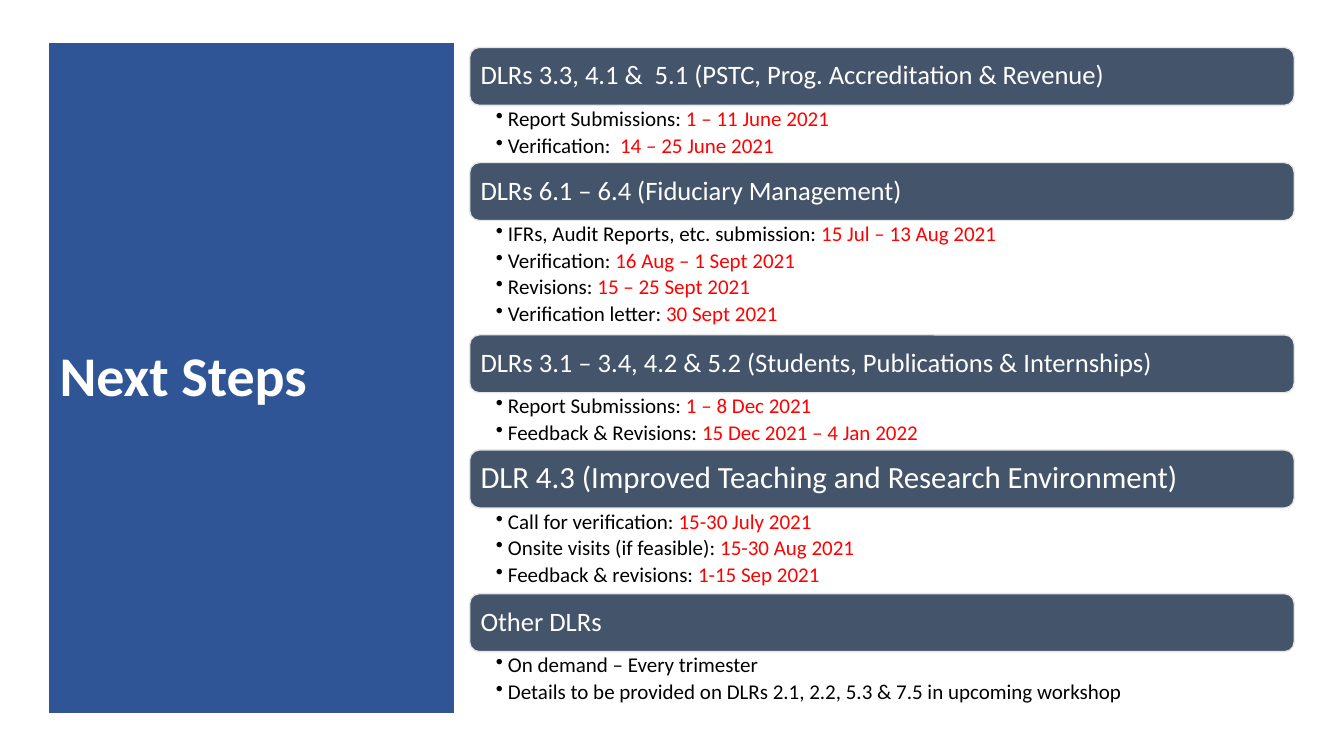
from dataclasses import dataclass

import pptx
import pptx.dml.color
import pptx.enum.shapes
import pptx.enum.text
import pptx.util
from lxml import etree
from pptx.oxml.ns import qn

Shape = pptx.enum.shapes.MSO_SHAPE
Align = pptx.enum.text.PP_ALIGN
Anchor = pptx.enum.text.MSO_ANCHOR
Pt = pptx.util.Pt

WIDE = pptx.util.Inches(13.33)
HIGH = pptx.util.Inches(7.5)


@dataclass(frozen=True)
class Theme:
    face: str = "Calibri"
    panel: str = "2F5597"
    rim: str = "325491"
    bar: str = "44546A"
    edge: str = "E7E6E6"
    light: str = "FFFFFF"
    dark: str = "000000"
    date: str = "FF0000"
    title: float = 40
    head: float = 19
    large: float = 22
    item: float = 15
    gap: float = 2.8


@dataclass(frozen=True)
class Box:
    """Left, top, width and height in percent of the slide."""
    left: float
    top: float
    width: float
    height: float


@dataclass(frozen=True)
class Step:
    label: str
    when: str = ""


@dataclass(frozen=True)
class Group:
    head: str
    steps: tuple[Step, ...]
    size: float


THEME = Theme()
PANEL = Box(3.68, 5.73, 30.08, 88.53)
LEFT, TOP, WIDTH = 34.95, 6.27, 61.35
BAR, ROW = 7.67, 3.78
PAD, INSET, HANG = 0.6, 1.95, 0.9

GROUPS = (
    Group("DLRs 3.3, 4.1 &  5.1 (PSTC, Prog. Accreditation & Revenue)", (
        Step("Report Submissions: ", "1 – 11 June 2021"),
        Step("Verification:  ", "14 – 25 June 2021"),
    ), THEME.head),
    Group("DLRs 6.1 – 6.4 (Fiduciary Management)", (
        Step("IFRs, Audit Reports, etc. submission: ", "15 Jul – 13 Aug 2021"),
        Step("Verification: ", "16 Aug – 1 Sept 2021"),
        Step("Revisions: ", "15 – 25 Sept 2021"),
        Step("Verification letter: ", "30 Sept 2021"),
    ), THEME.head),
    Group("DLRs 3.1 – 3.4, 4.2 & 5.2 (Students, Publications & Internships)", (
        Step("Report Submissions: ", "1 – 8 Dec 2021"),
        Step("Feedback & Revisions: ", "15 Dec 2021 – 4 Jan 2022"),
    ), THEME.head),
    Group("DLR 4.3 (Improved Teaching and Research Environment)", (
        Step("Call for verification: ", "15-30 July 2021"),
        Step("Onsite visits (if feasible): ", "15-30 Aug 2021"),
        Step("Feedback & revisions: ", "1-15 Sep 2021"),
    ), THEME.large),
    Group("Other DLRs", (
        Step("On demand – Every trimester"),
        Step("Details to be provided on DLRs 2.1, 2.2, 5.3 & 7.5 in upcoming workshop"),
    ), THEME.head),
)


def across(share: float) -> int:
    return round(WIDE * share / 100)


def down(share: float) -> int:
    return round(HIGH * share / 100)


def place(box: Box) -> tuple[int, int, int, int]:
    return across(box.left), down(box.top), across(box.width), down(box.height)


def paint(code: str) -> pptx.dml.color.RGBColor:
    return pptx.dml.color.RGBColor.from_string(code)


def style(para, size: float, color: str, bold: bool = False) -> None:
    para.alignment = Align.LEFT
    para.line_spacing = 0.9
    para.font.name = THEME.face
    para.font.size = Pt(size)
    para.font.bold = bold
    para.font.color.rgb = paint(color)


def add_block(slide, kind, box: Box, fill: str, line: str, text: str,
              size: float, pad: float, bold: bool = False) -> None:
    """Draw a filled shape with one line of light text, centred vertically."""
    block = slide.shapes.add_shape(kind, *place(box))
    block.shadow.inherit = False
    block.fill.solid()
    block.fill.fore_color.rgb = paint(fill)
    block.line.color.rgb = paint(line)
    block.line.width = Pt(1)
    frame = block.text_frame
    frame.word_wrap = True
    frame.vertical_anchor = Anchor.MIDDLE
    frame.margin_left = frame.margin_right = across(pad)
    para = frame.paragraphs[0]
    para.text = text
    style(para, size, THEME.light, bold)


def add_dot(para) -> None:
    """Give the paragraph a hanging bullet."""
    props = para._p.get_or_add_pPr()
    props.set("marL", str(across(HANG)))
    props.set("indent", str(-across(HANG)))
    mark = etree.Element(qn("a:buChar"), char="•")
    props.find(qn("a:defRPr")).addprevious(mark)


def add_list(slide, box: Box, steps: tuple[Step, ...]) -> None:
    frame = slide.shapes.add_textbox(*place(box)).text_frame
    frame.word_wrap = True
    frame.margin_left, frame.margin_right = across(INSET), across(HANG)
    frame.margin_top = frame.margin_bottom = down(0.4)
    for rank, step in enumerate(steps):
        para = frame.add_paragraph() if rank else frame.paragraphs[0]
        style(para, THEME.item, THEME.dark)
        para.space_after = Pt(THEME.gap)
        add_dot(para)
        para.add_run().text = step.label
        if step.when:
            date = para.add_run()
            date.text = step.when
            date.font.color.rgb = paint(THEME.date)


def main() -> None:
    deck = pptx.Presentation()
    deck.slide_width, deck.slide_height = WIDE, HIGH
    slide = deck.slides.add_slide(deck.slide_layouts[6])
    add_block(slide, Shape.RECTANGLE, PANEL, THEME.panel, THEME.rim,
              "Next Steps", THEME.title, 0.75, bold=True)
    top = TOP
    for group in GROUPS:
        add_block(slide, Shape.ROUNDED_RECTANGLE, Box(LEFT, top, WIDTH, BAR),
                  THEME.bar, THEME.edge, group.head, group.size, PAD)
        top += BAR
        depth = ROW * len(group.steps)
        add_list(slide, Box(LEFT, top, WIDTH, depth), group.steps)
        top += depth
    deck.save("out.pptx")


if __name__ == "__main__":
    main()
